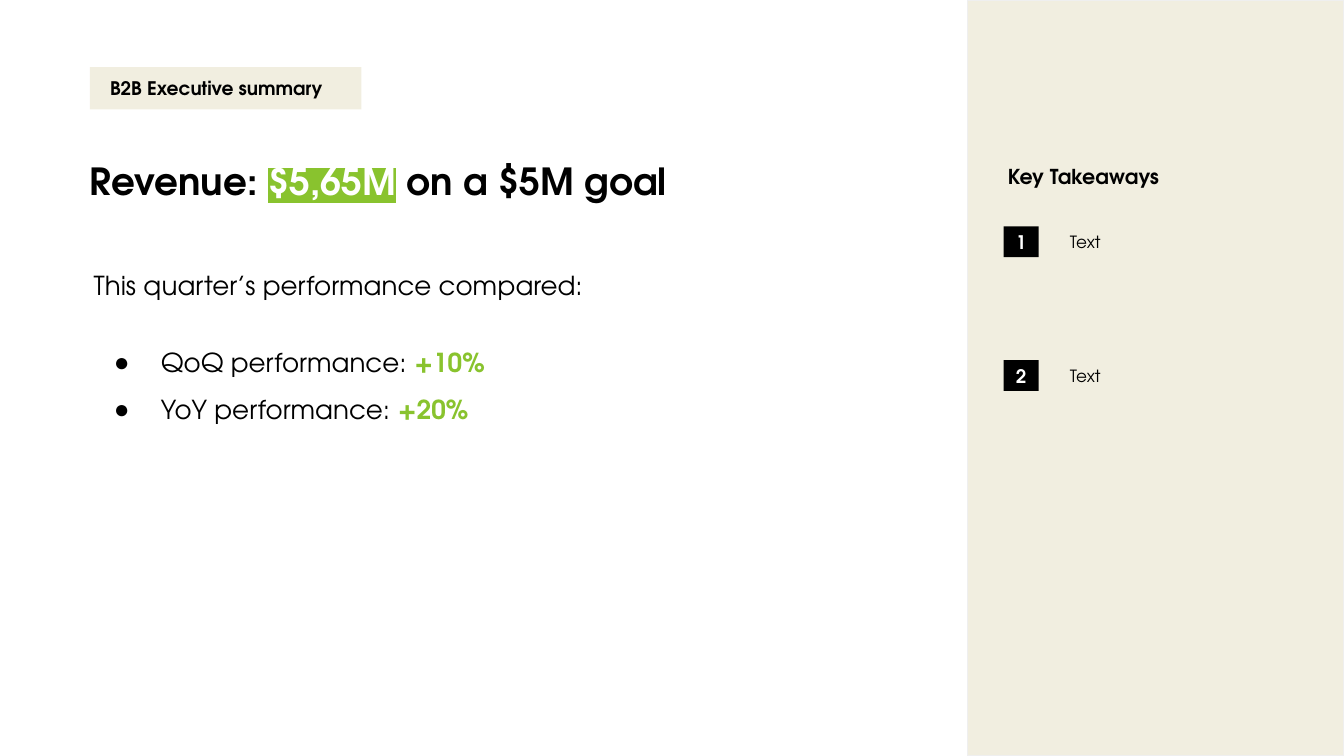
from lxml import etree
from pptx import Presentation
from pptx.dml.color import RGBColor
from pptx.enum.shapes import MSO_SHAPE
from pptx.enum.text import MSO_ANCHOR, MSO_AUTO_SIZE, PP_ALIGN
from pptx.oxml.ns import qn
from pptx.util import Cm, Pt

RECTANGLE = MSO_SHAPE.RECTANGLE
TOP, MIDDLE = MSO_ANCHOR.TOP, MSO_ANCHOR.MIDDLE
LEFT, CENTER = PP_ALIGN.LEFT, PP_ALIGN.CENTER
NO_FIT, GROW = MSO_AUTO_SIZE.NONE, MSO_AUTO_SIZE.SHAPE_TO_FIT_TEXT

FONT = "TeX Gyre Adventor"
COLORS = {
    "text": "000000",
    "inverse": "FFFFFF",
    "accent": "89C32E",
    "sand": "F1EEE0",
    "edge": "EFEFEF",
}
TAKEAWAYS = ["Text", "Text"]
COMPARISONS = [("QoQ performance: ", "+10%"), ("YoY performance: ", "+20%")]


def rgb(color):
    """Return the named palette colour."""
    return RGBColor.from_string(COLORS[color])


def apply(target, values):
    """Set every attribute in values on the target."""
    for name, value in values.items():
        setattr(target, name, value)


def place(shape, left, top, width, height):
    """Move and size a shape in centimetres."""
    apply(shape, {"left": Cm(left), "top": Cm(top), "width": Cm(width), "height": Cm(height)})


def format_frame(frame, inset=0.18, anchor=TOP, fit=NO_FIT):
    """Set the wrapping, anchoring and insets of a text frame."""
    sides = ("margin_left", "margin_top", "margin_right", "margin_bottom")
    apply(frame, dict.fromkeys(sides, Cm(inset)))
    apply(frame, {"word_wrap": True, "vertical_anchor": anchor, "auto_size": fit})


def add_run(paragraph, text, size, color="text", bold=False, highlight=None):
    """Append a formatted run, with an optional highlight."""
    run = paragraph.add_run()
    run.text = text
    apply(run.font, {"size": Pt(size), "bold": bold, "name": FONT})
    run.font.color.rgb = rgb(color)
    if highlight:
        marker = etree.Element(qn("a:highlight"))
        etree.SubElement(marker, qn("a:srgbClr"), val=COLORS[highlight])
        run.font.fill._xPr.find(qn("a:solidFill")).addnext(marker)


def set_bullet(paragraph, char=None):
    """Give a paragraph a hanging bullet, or remove its bullet."""
    properties = paragraph._p.get_or_add_pPr()
    properties.set("marL", str(Cm(1.27) if char else 0))
    properties.set("indent", str(Cm(-0.89) if char else 0))
    if char:
        bullet_color = etree.SubElement(properties, qn("a:buClr"))
        etree.SubElement(bullet_color, qn("a:srgbClr"), val=COLORS["text"])
        etree.SubElement(properties, qn("a:buChar"), char=char)
    else:
        etree.SubElement(properties, qn("a:buNone"))


def add_block(slide, box, fill, edge=None):
    """Add a flat filled rectangle and return it."""
    block = slide.shapes.add_shape(RECTANGLE, *map(Cm, box))
    block.shadow.inherit = False
    block.fill.solid()
    block.fill.fore_color.rgb = rgb(fill)
    if edge:
        block.line.color.rgb = rgb(edge)
        block.line.width = Pt(0.75)
    else:
        block.line.fill.background()
    return block


def add_label_block(slide, box, fill, text, color, align):
    """Add a rectangle holding a bold label and return its frame."""
    frame = add_block(slide, box, fill).text_frame
    format_frame(frame, anchor=MIDDLE)
    frame.paragraphs[0].alignment = align
    add_run(frame.paragraphs[0], text, 10, color, bold=True)
    return frame


def add_note(slide, box, text, size, bold=False):
    """Add a text box with one paragraph."""
    frame = slide.shapes.add_textbox(*map(Cm, box)).text_frame
    format_frame(frame, fit=GROW)
    frame.paragraphs[0].space_after = Pt(7)
    add_run(frame.paragraphs[0], text, size, bold=bold)


def fill_title(title):
    """Write the revenue headline."""
    place(title, 1.52, 2.69, 12.47, 1.45)
    format_frame(title.text_frame, anchor=MIDDLE)
    headline = title.text_frame.paragraphs[0]
    headline.alignment = LEFT
    add_run(headline, "Revenue: ", 20, bold=True)
    add_run(headline, "$5,65M", 20, "inverse", True, "accent")
    add_run(headline, " on a $5M goal", 20, bold=True)


def fill_performance(body):
    """Write the performance comparison list."""
    place(body, 1.52, 4.85, 15.6, 3.2)
    frame = body.text_frame
    format_frame(frame, inset=0.25)
    intro = frame.paragraphs[0]
    apply(intro, {"space_before": Pt(0), "space_after": Pt(16)})
    set_bullet(intro)
    add_run(intro, "This quarter’s performance compared:", 14)
    for measure, change in COMPARISONS:
        item = frame.add_paragraph()
        apply(item, {"space_before": Pt(0), "line_spacing": 1.5})
        set_bullet(item, "●")
        add_run(item, measure, 14)
        add_run(item, change, 14, "accent", True)


def add_takeaways(slide):
    """Add the side panel with its numbered takeaways."""
    add_block(slide, (18.29, 0, 7.11, 14.29), "sand", "edge")
    add_note(slide, (18.87, 2.92, 6.35, 0.86), "Key Takeaways", 11, bold=True)
    for index, takeaway in enumerate(TAKEAWAYS):
        top = 4.2 + 2.53 * index
        badge = (18.97, top + 0.08, 0.66, 0.58)
        add_label_block(slide, badge, "text", str(index + 1), "inverse", CENTER)
        add_note(slide, (20.04, top, 4.55, 0.76), takeaway, 9)


def main():
    """Build and save the executive summary slide."""
    deck = Presentation()
    apply(deck, {"slide_width": Cm(25.4), "slide_height": Cm(14.29)})
    slide = deck.slides.add_slide(deck.slide_layouts[1])
    fill_title(slide.shapes.title)
    fill_performance(slide.placeholders[1])
    add_takeaways(slide)
    tag = add_label_block(
        slide, (1.7, 1.27, 5.13, 0.8), "sand", "B2B Executive summary", "text", LEFT
    )
    tag.margin_left = Cm(0.38)
    deck.save("out.pptx")


if __name__ == "__main__":
    main()
